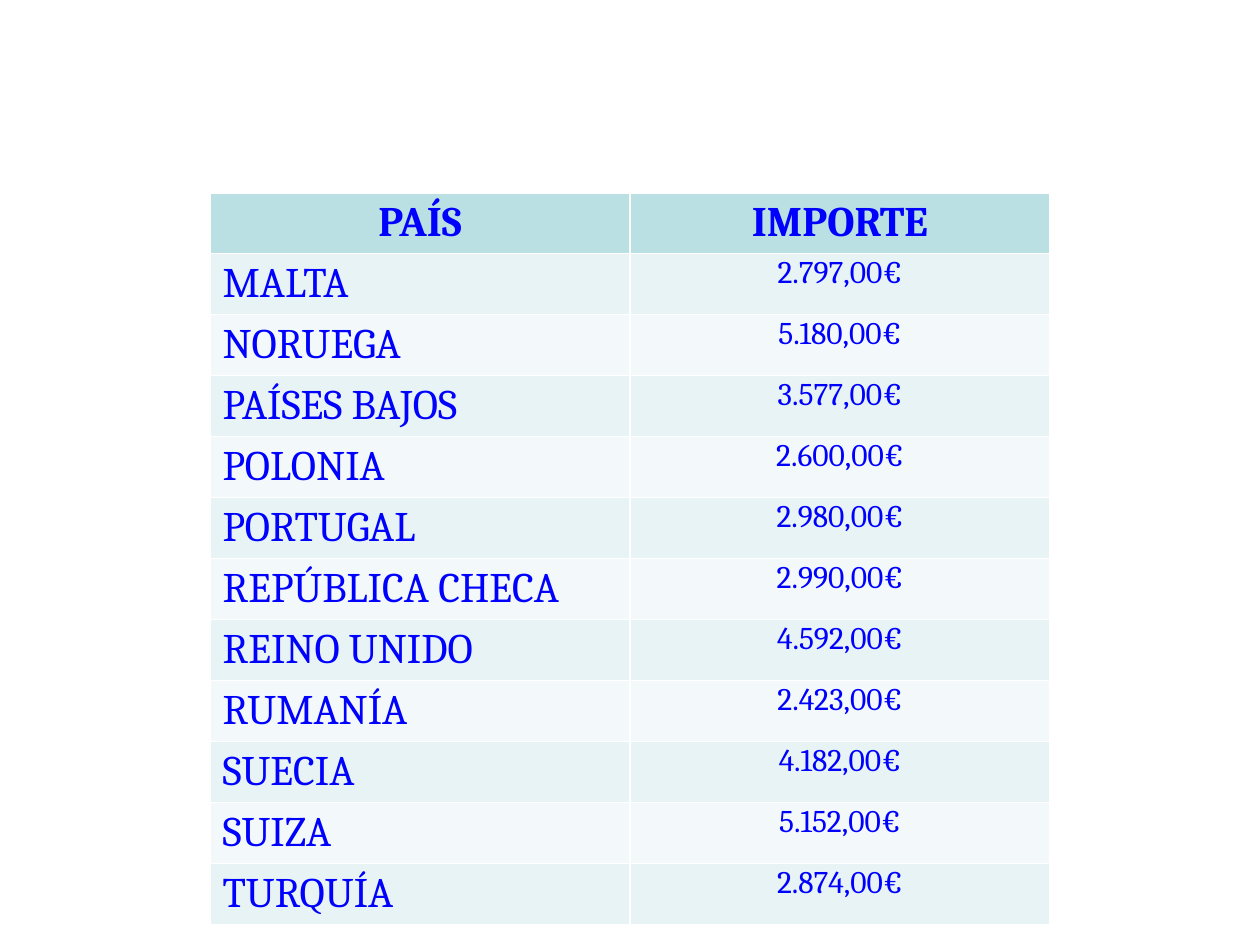
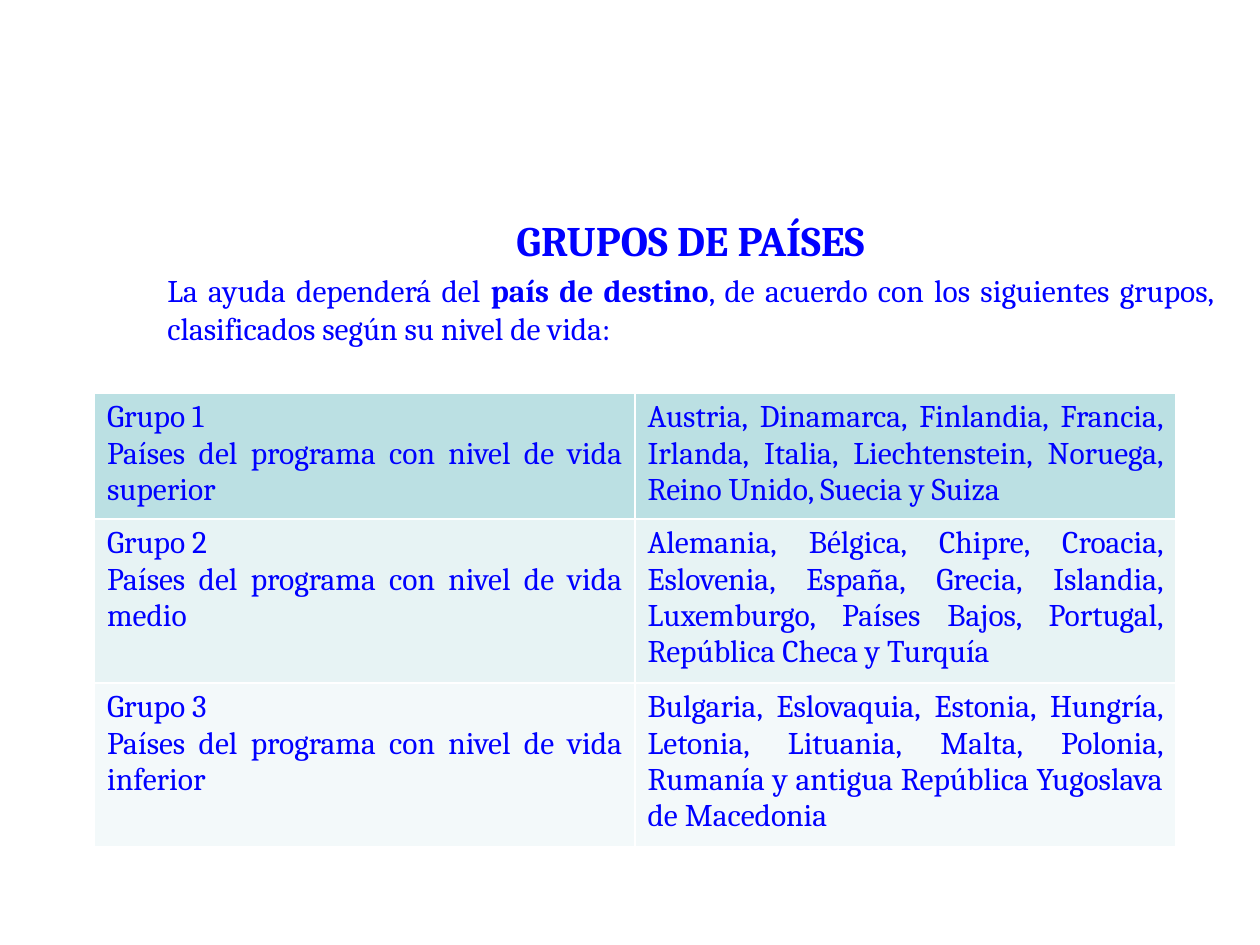
from dataclasses import dataclass

from pptx import Presentation
from pptx.dml.color import RGBColor as Rgb
from pptx.enum.text import MSO_ANCHOR as Anchor, PP_ALIGN as Align
from pptx.util import Inches, Pt


@dataclass(frozen=True)
class Theme:
    """Colours, type sizes and measures shared by the slides."""
    font: str = "Cambria"
    ink: str = "0000FF"
    header: str = "BBE0E3"
    bands: tuple = ("E7F3F4", "F3F9FA")
    large: int = 24
    regular: int = 18
    width: float = 10
    height: float = 7.5


THEME = Theme()
TITLE_ONLY, BLANK = 5, 6
TIGHT = (0.01, 0.01, 0.01, 0)

GRANTS = [
    ("MALTA", "2.797,00€"),
    ("NORUEGA", "5.180,00€"),
    ("PAÍSES BAJOS", "3.577,00€"),
    ("POLONIA", "2.600,00€"),
    ("PORTUGAL", "2.980,00€"),
    ("REPÚBLICA CHECA", "2.990,00€"),
    ("REINO UNIDO", "4.592,00€"),
    ("RUMANÍA", "2.423,00€"),
    ("SUECIA", "4.182,00€"),
    ("SUIZA", "5.152,00€"),
    ("TURQUÍA", "2.874,00€"),
]

LIVING_STANDARDS = [
    ("superior", "Austria, Dinamarca, Finlandia, Francia, Irlanda, Italia, "
     "Liechtenstein, Noruega, Reino Unido, Suecia y Suiza"),
    ("medio", "Alemania, Bélgica, Chipre, Croacia, Eslovenia, España, Grecia, "
     "Islandia, Luxemburgo, Países Bajos, Portugal, República Checa y Turquía"),
    ("inferior", "Bulgaria, Eslovaquia, Estonia, Hungría, Letonia, Lituania, Malta, "
     "Polonia, Rumanía y antigua República Yugoslava de Macedonia"),
]


def across(share):
    """Return a share of the slide's width."""
    return Inches(THEME.width * share)


def down(share):
    """Return a share of the slide's height."""
    return Inches(THEME.height * share)


def write(frame, paragraphs, size, align):
    """Fill a text frame with paragraphs, each a list of (text, bold) runs."""
    for index, runs in enumerate(paragraphs):
        paragraph = frame.add_paragraph() if index else frame.paragraphs[0]
        paragraph.alignment = align
        for text, bold in runs:
            run = paragraph.add_run()
            run.text = text
            run.font.name = THEME.font
            run.font.size = Pt(size)
            run.font.bold = bold
            run.font.color.rgb = Rgb.from_string(THEME.ink)


def add_banded_table(slide, place, row_heights):
    """Add a two-column table with a header tint and alternating bands."""
    left, top, width = place
    table = slide.shapes.add_table(
        len(row_heights), 2, across(left), down(top),
        across(width), Inches(sum(row_heights))).table
    for index, (row, height) in enumerate(zip(table.rows, row_heights)):
        row.height = Inches(height)
        tint = THEME.bands[(index - 1) % 2] if index else THEME.header
        for cell in row.cells:
            cell.fill.solid()
            cell.fill.fore_color.rgb = Rgb.from_string(tint)
    return table


def set_margins(cell, margins):
    """Set a cell's left, top, right and bottom margins in inches."""
    (cell.margin_left, cell.margin_top,
     cell.margin_right, cell.margin_bottom) = map(Inches, margins)


def add_title(slide, text, place):
    """Place and format the title placeholder."""
    title = slide.shapes.title
    left, top, width, height = place
    title.left, title.top = across(left), down(top)
    title.width, title.height = across(width), down(height)
    title.text_frame.vertical_anchor = Anchor.TOP
    write(title.text_frame, [[(text, True)]], THEME.large, Align.CENTER)


def add_justified_text(slide, runs, place):
    """Add a wrapping text box with one justified paragraph."""
    left, top, width, height = place
    frame = slide.shapes.add_textbox(
        across(left), down(top), across(width), down(height)).text_frame
    frame.word_wrap = True
    write(frame, [runs], THEME.regular, Align.JUSTIFY)


def build_grants(deck):
    """Build the slide listing the amount for each country."""
    slide = deck.slides.add_slide(deck.slide_layouts[BLANK])
    table = add_banded_table(slide, (1 / 6, 0.204, 4 / 6), [0.41] * (len(GRANTS) + 1))
    for column, heading in enumerate(("PAÍS", "IMPORTE")):
        write(table.cell(0, column).text_frame, [[(heading, True)]],
              THEME.large, Align.CENTER)
    for row, (country, amount) in enumerate(GRANTS, start=1):
        write(table.cell(row, 0).text_frame, [[(country, False)]],
              THEME.large, Align.LEFT)
        amount_cell = table.cell(row, 1)
        set_margins(amount_cell, TIGHT)
        write(amount_cell.text_frame, [[(amount, False)]], THEME.regular, Align.CENTER)


def build_groups(deck):
    """Build the slide sorting countries by living standard."""
    slide = deck.slides.add_slide(deck.slide_layouts[TITLE_ONLY])
    left, width = 0.123, 0.85
    add_title(slide, "GRUPOS DE PAÍSES", (left, 0.22, width, 0.06))
    add_justified_text(slide, [
        ("La ayuda dependerá del ", False),
        ("país de destino", True),
        (", de acuerdo con los siguientes grupos, "
         "clasificados según su nivel de vida:", False),
    ], (left, 0.28, width, 0.1))
    table = add_banded_table(slide, (0.075, 0.416, 0.858), (1, 1.3, 1.3))
    for row, (standard, countries) in enumerate(LIVING_STANDARDS):
        group = [[(f"Grupo {row + 1}", False)],
                 [(f"Países del programa con nivel de vida {standard}", False)]]
        for column, paragraphs in enumerate((group, [[(countries, False)]])):
            write(table.cell(row, column).text_frame, paragraphs,
                  THEME.regular, Align.JUSTIFY)


def main():
    """Build the deck and save it."""
    deck = Presentation()
    deck.slide_width, deck.slide_height = Inches(THEME.width), Inches(THEME.height)
    build_grants(deck)
    build_groups(deck)
    deck.save("out.pptx")


if __name__ == "__main__":
    main()
